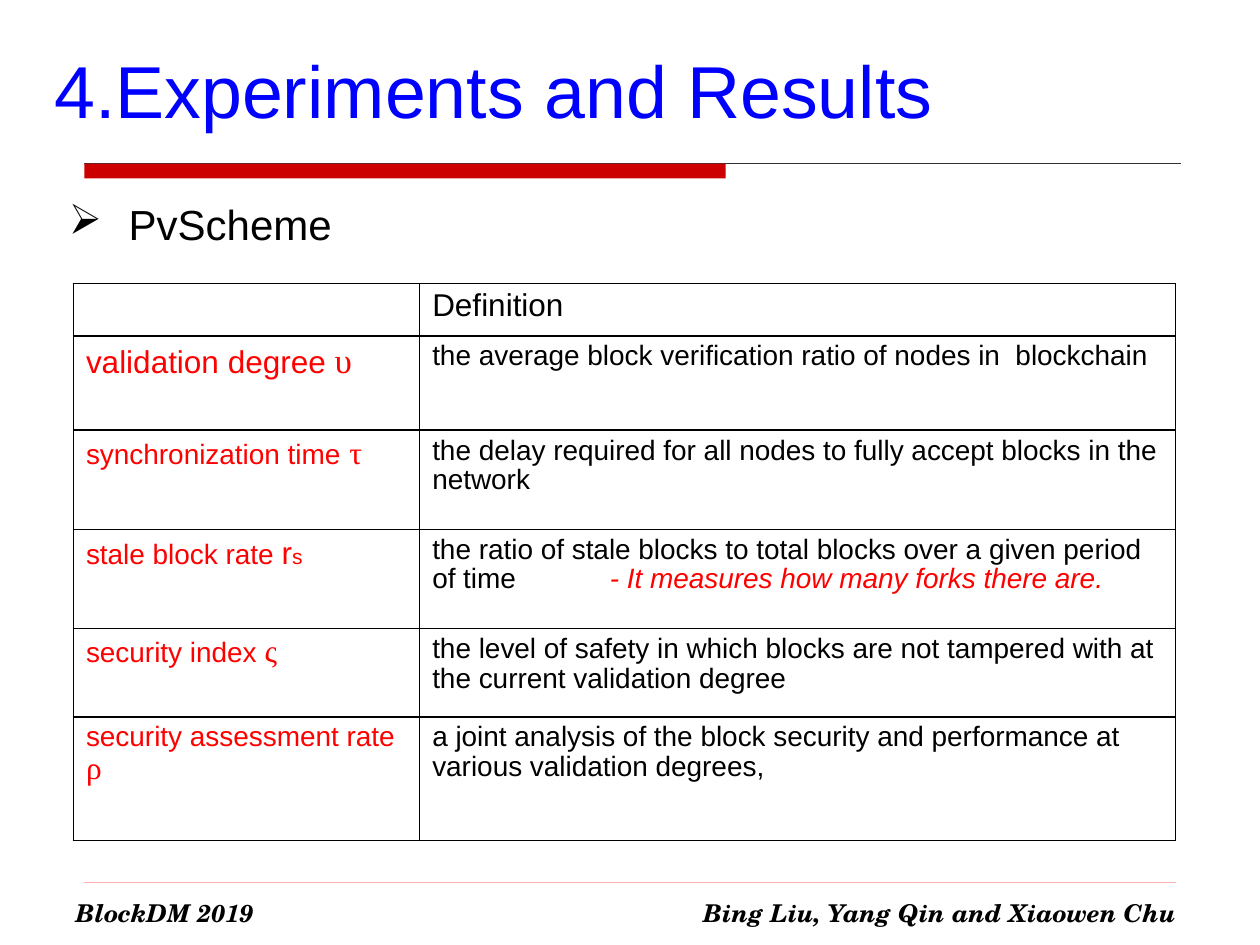
from lxml.etree import SubElement
from pptx import Presentation
from pptx.dml.color import RGBColor
from pptx.enum.shapes import MSO_CONNECTOR as CONN, MSO_SHAPE as SHAPE
from pptx.enum.text import MSO_ANCHOR as ANCHOR, PP_ALIGN as ALIGN
from pptx.oxml.ns import qn
from pptx.util import Cm, Pt

BLACK = RGBColor(0x00, 0x00, 0x00)
GREY = RGBColor(0x33, 0x33, 0x33)
RED = RGBColor(0xFF, 0x00, 0x00)
BLUE = RGBColor(0x00, 0x00, 0xFF)
BAR_RED = RGBColor(0xCC, 0x00, 0x00)
PALE_RED = RGBColor(0xFF, 0xB0, 0xB0)
SANS, SERIF, SCHOOL = "Arial", "Times New Roman", "TeX Gyre Schola"
TIGHT = 0.95

# Content: a run is (text, size, font), a row is (height, term runs, definition)
TITLE = "4.Experiments and Results"
BULLET = " PvScheme"
HEADING = "Definition"
HEADING_H = 1.05
FORK_NOTE = "- It measures how many forks there are."
ROWS = [
    (1.9, [("validation degree ", 18, SANS), ("υ", 20, SERIF)],
     "the average block verification ratio of nodes in  blockchain"),
    (2, [("synchronization time", 16, SANS), (" ", 18, SANS), ("τ", 18, SERIF)],
     "the delay required for all nodes to fully accept blocks in the network"),
    (2, [("stale block rate ", 16, SANS), ("r", 18, SANS), ("s", 12, SANS)],
     "the ratio of stale blocks to total blocks over a given period of time"),
    (1.78, [("security index ", 16, SANS), ("ς", 18, SERIF)],
     "the level of safety in which blocks are not tampered with at the current validation degree"),
    (2.49, [("security assessment rate ", 16, SANS), ("ρ ", 18, SERIF)],
     "a joint analysis of the block security and performance at various validation degrees, "),
]
NOTE_ROW, NOTE_TAB = 3, 3.58
COLS = [6.98, 15.24]
FOOTERS = [  # text, left, width
    ("Bing Liu, Yang Qin and Xiaowen Chu", 13.77, 10.36),
    ("BlockDM 2019", 0.43, 5.79),
]


def add_run(p, text, size, font=SANS, color=BLACK, bold=False, italic=False):
    r = p.add_run()
    r.text = text
    f = r.font
    f.size, f.name, f.bold, f.italic = Pt(size), font, bold, italic
    f.color.rgb = color


def add_box(s, x, y, w, h):
    tf = s.shapes.add_textbox(Cm(x), Cm(y), Cm(w), Cm(h)).text_frame
    tf.word_wrap = True
    return tf.paragraphs[0]


def add_line(s, x1, x2, y, color, width):
    line = s.shapes.add_connector(CONN.STRAIGHT, Cm(x1), Cm(y), Cm(x2), Cm(y))
    line.line.color.rgb, line.line.width = color, Pt(width)
    SubElement(line._element.spPr, qn("a:effectLst"))


def add_borders(cell):
    tcPr = cell._tc.get_or_add_tcPr()
    for side in ("lnL", "lnR", "lnT", "lnB"):
        ln = SubElement(tcPr, qn(f"a:{side}"), w=str(Pt(1)))
        fill = SubElement(ln, qn("a:solidFill"))
        SubElement(fill, qn("a:srgbClr"), val=str(BLACK))


prs = Presentation()
prs.slide_width, prs.slide_height = Cm(25.4), Cm(19.05)
s = prs.slides.add_slide(prs.slide_layouts[5])

# Rule under the title
add_line(s, 1.7, 23.8, 3.3, GREY, 0.75)
bar = s.shapes.add_shape(SHAPE.RECTANGLE, Cm(1.7), Cm(3.3), Cm(12.93), Cm(0.3))
bar.shadow.inherit = False
bar.fill.solid()
bar.fill.fore_color.rgb = BAR_RED
bar.line.fill.background()

# Footer
add_line(s, 1.7, 23.7, 17.78, PALE_RED, 0.25)
for text, x, w in FOOTERS:
    p = add_box(s, x, 17.98, w, 0.9)
    p.alignment = ALIGN.CENTER
    add_run(p, text, 14, SCHOOL, bold=True, italic=True)

# Title
title = s.shapes.title
title.left, title.top, title.width, title.height = Cm(0.84), Cm(0.2), Cm(24.13), Cm(3.18)
title.text_frame.vertical_anchor = ANCHOR.MIDDLE
p = title.text_frame.paragraphs[0]
p.alignment = ALIGN.LEFT
add_run(p, TITLE, 42, color=BLUE)

# Bullet line
p = add_box(s, 1.14, 3.95, 23.42, 1.2)
p.line_spacing = TIGHT
pPr = p._p.get_or_add_pPr()
pPr.set("marL", str(Cm(0.97)))
pPr.set("indent", str(Cm(-0.97)))
bullet_color = SubElement(pPr, qn("a:buClr"))
SubElement(bullet_color, qn("a:srgbClr"), val=str(BLACK))
SubElement(pPr, qn("a:buChar"), char="➢")
add_run(p, BULLET, 24)

# Table of definitions
heights = [HEADING_H] + [row[0] for row in ROWS]
table = s.shapes.add_table(len(heights), len(COLS), Cm(1.48), Cm(5.72),
                           Cm(sum(COLS)), Cm(sum(heights))).table
table.first_row = table.horz_banding = False
for col, w in zip(table.columns, COLS):
    col.width = Cm(w)
for row, h in zip(table.rows, heights):
    row.height = Cm(h)
for cell in table.iter_cells():
    add_borders(cell)
    cell.fill.background()
    cell.text_frame.paragraphs[0].line_spacing = TIGHT

add_run(table.cell(0, 1).text_frame.paragraphs[0], HEADING, 18)
for i, (_, term, definition) in enumerate(ROWS, 1):
    p = table.cell(i, 0).text_frame.paragraphs[0]
    if i < len(ROWS):
        p.line_spacing = 1.0
    for text, size, font in term:
        add_run(p, text, size, font, RED)
    p = table.cell(i, 1).text_frame.paragraphs[0]
    add_run(p, definition, 16)
    if i == NOTE_ROW:
        tabs = SubElement(p._p.get_or_add_pPr(), qn("a:tabLst"))
        SubElement(tabs, qn("a:tab"), pos=str(Cm(NOTE_TAB)), algn="l")
        add_run(p, "\t" + FORK_NOTE, 16, color=RED, italic=True)

prs.save("out.pptx")
